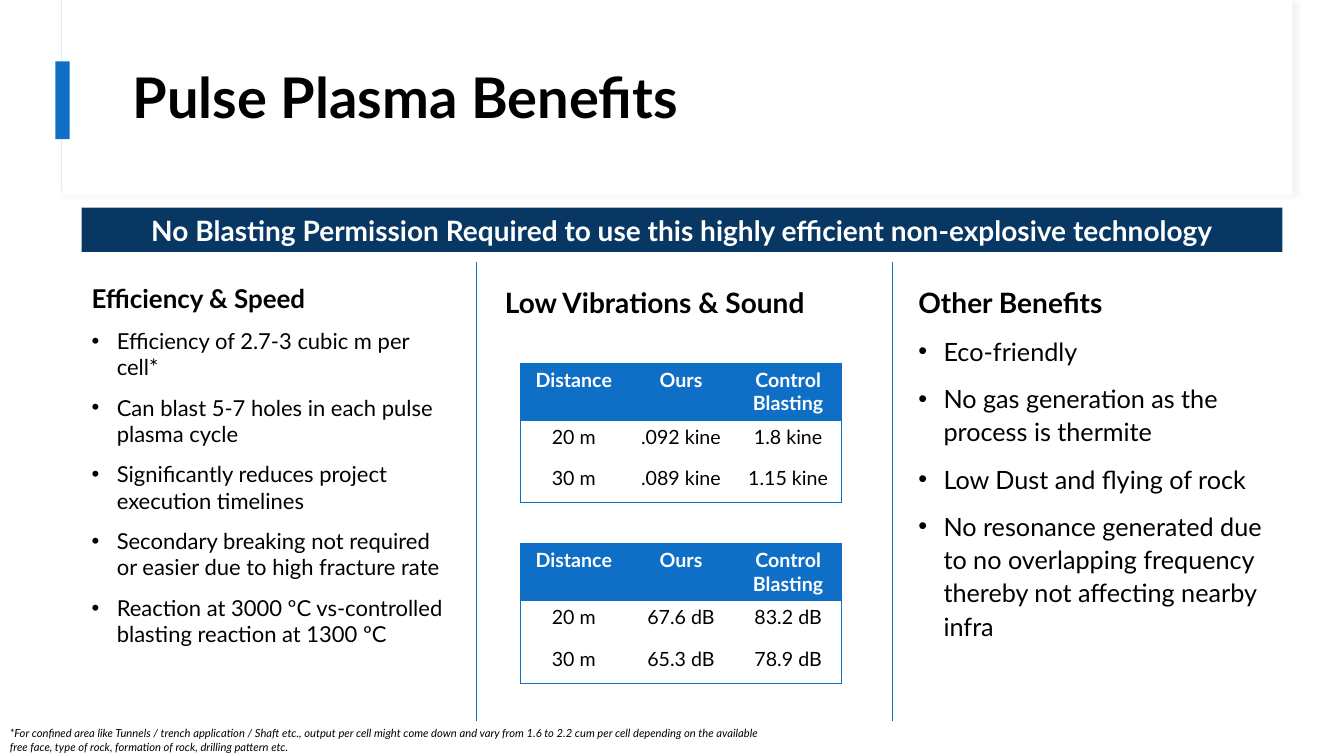
from lxml.etree import SubElement
from pptx import Presentation
from pptx.dml.color import RGBColor
from pptx.enum.shapes import MSO_CONNECTOR, MSO_SHAPE
from pptx.enum.text import MSO_ANCHOR, PP_ALIGN
from pptx.oxml.ns import qn
from pptx.util import Inches, Pt

COLORS = {"blue": "0F6FC6", "navy": "083763", "pale": "E0ECF8",
          "shadow": "D9D9D9", "white": "FFFFFF", "black": "000000"}
FONT = "Lato"

EFFICIENCY = ["Efficiency of 2.7-3 cubic m per cell*",
              "Can blast 5-7 holes in each pulse plasma cycle",
              "Significantly reduces project execution timelines",
              "Secondary breaking not required or easier due to high fracture rate",
              "Reaction at 3000 ºC vs-controlled blasting reaction at 1300 ºC"]
OTHER = ["Eco-friendly",
         "No gas generation as the process is thermite",
         "Low Dust and flying of rock",
         "No resonance generated due to no overlapping frequency "
         "thereby not affecting nearby infra"]
HEADER = ["Distance", "Ours", "Control Blasting"]
VIBRATION = [HEADER, ["20 m", ".092 kine", "1.8 kine"], ["30 m", ".089 kine", "1.15 kine"]]
SOUND = [HEADER, ["20 m", "67.6 dB", "83.2 dB"], ["30 m", "65.3 dB", "78.9 dB"]]
FOOTNOTE = ("*For confined area like Tunnels / trench application / Shaft etc., output per cell "
            "might come down and vary from 1.6 to 2.2 cum per cell depending on the available "
            "free face, type of rock, formation of rock, drilling pattern etc.")


def rgb(name):
    return RGBColor.from_string(COLORS[name])


def add_text(tf, text, size, color="black", bold=False, italic=False,
             align=PP_ALIGN.LEFT, before=0, spacing=1.0, bullet=False):
    """Fill the first empty paragraph, or add one."""
    p = tf.paragraphs[0] if not tf.text else tf.add_paragraph()
    p.alignment, p.space_before, p.line_spacing = align, Pt(before), spacing
    if bullet:
        pPr = p._p.get_or_add_pPr()
        pPr.set("marL", str(Inches(0.25)))
        pPr.set("indent", str(-Inches(0.25)))
        SubElement(pPr, qn("a:buFont"), typeface="Arial")
        SubElement(pPr, qn("a:buChar"), char="•")
    r = p.add_run()
    r.text = text
    r.font.name, r.font.size = FONT, Pt(size)
    r.font.bold, r.font.italic = bold, italic
    r.font.color.rgb = rgb(color)


def add_rect(s, x, y, w, h, fill=None, line=None):
    sp = s.shapes.add_shape(MSO_SHAPE.RECTANGLE, Inches(x), Inches(y), Inches(w), Inches(h))
    sp.shadow.inherit = False
    if fill:
        sp.fill.solid()
        sp.fill.fore_color.rgb = rgb(fill)
    else:
        sp.fill.background()
    if line:
        sp.line.color.rgb, sp.line.width = rgb(line), Pt(0.75)
    else:
        sp.line.fill.background()
    sp.text_frame.word_wrap = True
    return sp


def add_textbox(s, x, y, w, h, anchor=MSO_ANCHOR.TOP):
    tf = s.shapes.add_textbox(Inches(x), Inches(y), Inches(w), Inches(h)).text_frame
    tf.word_wrap, tf.vertical_anchor = True, anchor
    return tf


def add_header(s, x, y, w, h):
    # White card with a soft shadow, covered by a plain panel
    card = add_rect(s, x, y, w, h, "white", "pale")
    effects = card._element.spPr.find(qn("a:effectLst"))
    shadow = SubElement(effects, qn("a:outerShdw"), blurRad=str(Pt(4)), dist=str(Pt(3)),
                        dir=str(45 * 60000), algn="tl", rotWithShape="0")
    color = SubElement(shadow, qn("a:srgbClr"), val=COLORS["shadow"])
    SubElement(color, qn("a:alpha"), val="30000")
    add_rect(s, x + 0.01, y, w - 0.01, h + 0.05, "white")
    # Accent bar and title
    add_rect(s, x - 0.06, y + 0.61, 0.14, 0.77, "blue")
    tf = add_textbox(s, x + 0.61, y + 0.35, 11.12, 1.29, MSO_ANCHOR.MIDDLE)
    add_text(tf, "Pulse Plasma Benefits", 40, bold=True, spacing=0.9)


def add_banner(s, x, y, w, h, text):
    sp = add_rect(s, x, y, w, h, "navy")
    sp.text_frame.vertical_anchor = MSO_ANCHOR.MIDDLE
    add_text(sp.text_frame, text, 20, "white", bold=True, align=PP_ALIGN.CENTER)


def add_column(s, x, y, w, h, heading, items=(), head_size=20, size=18, spacing=1.1):
    tf = add_rect(s, x, y, w, h, line="white").text_frame
    tf.vertical_anchor = MSO_ANCHOR.TOP
    add_text(tf, heading, head_size, bold=True, before=10, spacing=spacing)
    for item in items:
        add_text(tf, item, size, before=10, spacing=spacing, bullet=True)


def set_borders(cell, sides):
    tcPr = cell._tc.get_or_add_tcPr()
    for side in "LRTB":
        ln = SubElement(tcPr, qn(f"a:ln{side}"), w=str(Pt(0.5)))
        if side in sides:
            fill = SubElement(ln, qn("a:solidFill"))
            SubElement(fill, qn("a:srgbClr"), val=COLORS["blue"])
        else:
            SubElement(ln, qn("a:noFill"))


def add_data_table(s, x, y, w, row_h, rows):
    n_rows, n_cols = len(rows), len(rows[0])
    table = s.shapes.add_table(n_rows, n_cols, Inches(x), Inches(y),
                               Inches(w), Inches(row_h * n_rows)).table
    # "No Style, No Grid", so that only the cell formats show
    style = table._tbl.tblPr.find(qn("a:tableStyleId"))
    style.text = "{2D5ABB26-0587-4C30-8999-92F81FD0307C}"
    for i, row in enumerate(rows):
        table.rows[i].height = Inches(row_h)
        for j, text in enumerate(row):
            cell = table.cell(i, j)
            head = i == 0
            sides = ("T" if i < 2 else "") + ("" if head else "B")
            sides += {0: "L", n_cols - 1: "R"}.get(j, "")
            set_borders(cell, sides)
            if head:
                cell.fill.solid()
                cell.fill.fore_color.rgb = rgb("blue")
            else:
                cell.fill.background()
            add_text(cell.text_frame, text, 14, "white" if head else "black",
                     bold=head, align=PP_ALIGN.CENTER)


def add_divider(s, x, top, bottom):
    ln = s.shapes.add_connector(MSO_CONNECTOR.STRAIGHT, Inches(x), Inches(top),
                                Inches(x), Inches(bottom))
    ln.line.color.rgb, ln.line.width = rgb("blue"), Pt(0.5)
    SubElement(ln._element.spPr, qn("a:effectLst"))


def add_benefits(s, x, y, w, h):
    # Three equal columns
    pitch = 4.1
    col_w = w - 2 * pitch
    add_column(s, x, y, col_w, h, "Efficiency & Speed", EFFICIENCY, 18.5, 15.7, 1.0)
    add_column(s, x + pitch, y, col_w, h, "Low Vibrations & Sound")
    add_column(s, x + 2 * pitch, y, col_w, h, "Other Benefits", OTHER)
    # Tables in the middle column
    for i, rows in enumerate((VIBRATION, SOUND)):
        add_data_table(s, x + pitch + 0.25, y + 0.85 + i * 1.79, 3.19, 0.41, rows)
    # Dividers
    for line_x in (3.91, 8.04):
        add_divider(s, x + line_x, y - 0.15, y + h - 0.07)


def main():
    prs = Presentation()
    prs.slide_width, prs.slide_height = Inches(13.33), Inches(7.5)
    s = prs.slides.add_slide(prs.slide_layouts[6])
    add_header(s, 0.61, 0, 12.21, 1.89)
    add_benefits(s, 0.81, 2.75, 11.91, 4.47)
    add_banner(s, 0.81, 2.06, 11.91, 0.44,
               "No Blasting Permission Required to use this highly efficient "
               "non-explosive technology")
    # Footnote
    add_text(add_textbox(s, 0, 7.16, 7.64, 0.37), FOOTNOTE, 8, italic=True)
    prs.save("out.pptx")


if __name__ == "__main__":
    main()
